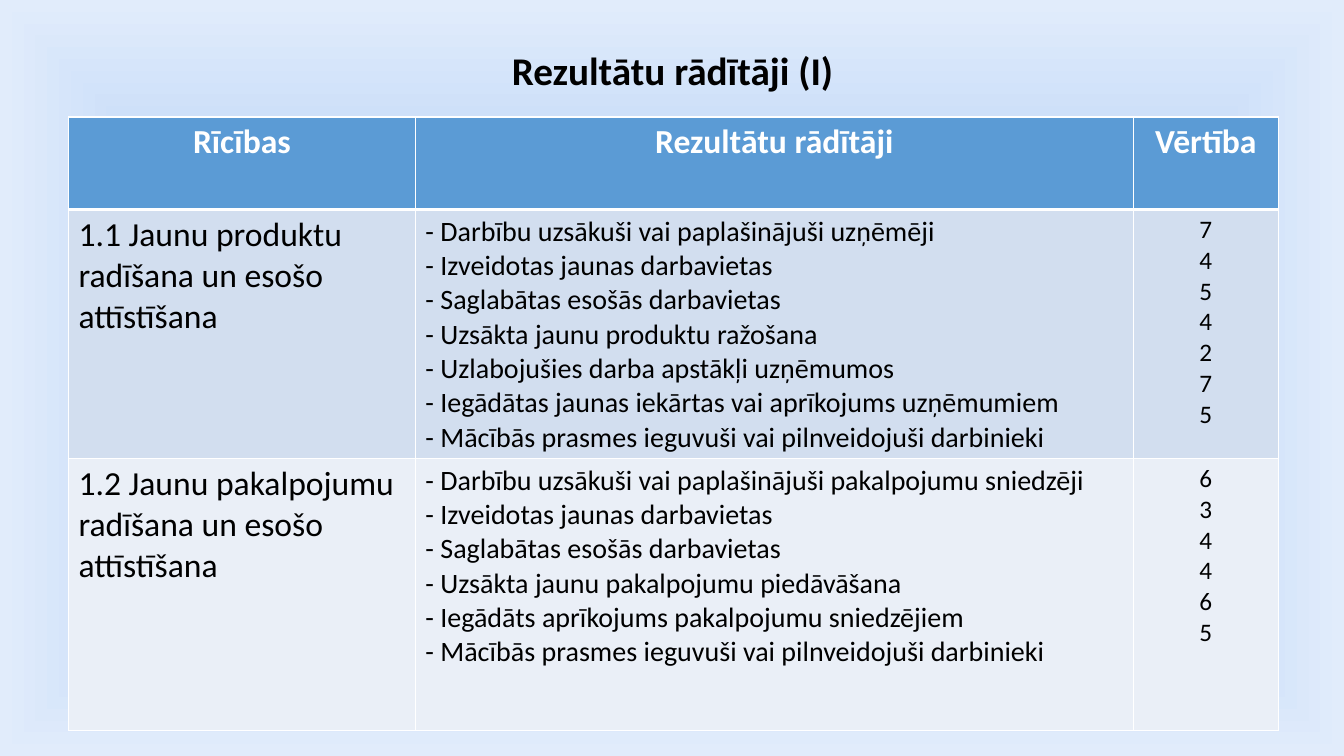
from dataclasses import dataclass

from pptx import Presentation
from pptx.dml.color import RGBColor
from pptx.enum.text import MSO_ANCHOR as Anchor, PP_ALIGN as Align
from pptx.oxml import parse_xml
from pptx.oxml.ns import nsdecls
from pptx.util import Inches, Pt


@dataclass(frozen=True)
class Theme:
    font: str = "Calibri"
    title_size: int = 28
    heading_size: int = 24
    body_size: int = 20
    value_size: int = 18
    ink: str = "000000"
    white: str = "FFFFFF"
    header_fill: str = "5B9BD5"
    band_fills: tuple = ("D2DEEF", "EAEFF7")
    backdrop: tuple = ((0, "FFD966"), (50, "C1D8F8"), (100, "E1ECFB"))


class SlideBuilder:
    def __init__(self, slide, theme):
        self.slide = slide
        self.theme = theme

    def background(self):
        stops = "".join(
            f'<a:gs pos="{place * 1000}"><a:srgbClr val="{color}"/></a:gs>'
            for place, color in self.theme.backdrop
        )
        self.slide.element.cSld.insert(0, parse_xml(
            f'<p:bg {nsdecls("p", "a")}><p:bgPr><a:gradFill rotWithShape="1">'
            f'<a:gsLst>{stops}</a:gsLst><a:path path="shape">'
            '<a:fillToRect l="50000" t="50000" r="50000" b="50000"/></a:path>'
            '</a:gradFill><a:effectLst/></p:bgPr></p:bg>'
        ))

    def add_lines(self, frame, lines, size, color, align=Align.LEFT, bold=False, spacing=None):
        frame.word_wrap = True
        for index, line in enumerate(lines):
            paragraph = frame.add_paragraph() if index else frame.paragraphs[0]
            paragraph.alignment = align
            paragraph.line_spacing = spacing
            run = paragraph.add_run()
            run.text = line
            run.font.name = self.theme.font
            run.font.size = Pt(size)
            run.font.bold = bold
            run.font.color.rgb = RGBColor.from_string(color)

    def title(self, text, left, top, width, height):
        box = self.slide.shapes.add_textbox(
            Inches(left), Inches(top), Inches(width), Inches(height))
        box.text_frame.vertical_anchor = Anchor.MIDDLE
        self.add_lines(box.text_frame, [text], self.theme.title_size, self.theme.ink,
                       Align.CENTER, bold=True, spacing=0.9)

    def cell(self, cell, lines, fill, size, color, align, bold=False, bottom=1):
        properties = cell._tc.get_or_add_tcPr()
        for side, width in (("L", 1), ("R", 1), ("T", 1), ("B", bottom)):
            properties.append(parse_xml(
                f'<a:ln{side} {nsdecls("a")} w="{Pt(width)}"><a:solidFill>'
                f'<a:srgbClr val="{self.theme.white}"/></a:solidFill></a:ln{side}>'
            ))
        cell.fill.solid()
        cell.fill.fore_color.rgb = RGBColor.from_string(fill)
        self.add_lines(cell.text_frame, lines, size, color, align, bold)

    def table(self, headings, actions, left, top, widths, heights):
        theme = self.theme
        table = self.slide.shapes.add_table(
            len(heights), len(widths), Inches(left), Inches(top),
            Inches(sum(widths)), Inches(sum(heights))).table
        table.horz_banding = False
        for column, width in zip(table.columns, widths):
            column.width = Inches(width)
        for row, height in zip(table.rows, heights):
            row.height = Inches(height)

        # Header row
        for column, heading in enumerate(headings):
            self.cell(table.cell(0, column), [heading], theme.header_fill,
                      theme.heading_size, theme.white, Align.CENTER, True, bottom=3)

        # One row per action: name, indicators, values
        columns = ((theme.heading_size, Align.LEFT), (theme.body_size, Align.LEFT),
                   (theme.value_size, Align.CENTER))
        for row, (action, indicators) in enumerate(actions.items(), start=1):
            names = [f"- {name}" for name, _ in indicators]
            values = [str(value) for _, value in indicators]
            for column, lines in enumerate(([action], names, values)):
                size, align = columns[column]
                self.cell(table.cell(row, column), lines, theme.band_fills[row - 1],
                          size, theme.ink, align)


HEADINGS = ("Rīcības", "Rezultātu rādītāji", "Vērtība")
NEW_JOBS = "Izveidotas jaunas darbavietas"
KEPT_JOBS = "Saglabātas esošās darbavietas"
SKILLS = "Mācībās prasmes ieguvuši vai pilnveidojuši darbinieki"
ACTIONS = {
    "1.1 Jaunu produktu radīšana un esošo attīstīšana": (
        ("Darbību uzsākuši vai paplašinājuši uzņēmēji", 7),
        (NEW_JOBS, 4),
        (KEPT_JOBS, 5),
        ("Uzsākta jaunu produktu ražošana", 4),
        ("Uzlabojušies darba apstākļi uzņēmumos", 2),
        ("Iegādātas jaunas iekārtas vai aprīkojums uzņēmumiem", 7),
        (SKILLS, 5),
    ),
    "1.2 Jaunu pakalpojumu radīšana un esošo attīstīšana": (
        ("Darbību uzsākuši vai paplašinājuši pakalpojumu sniedzēji", 6),
        (NEW_JOBS, 3),
        (KEPT_JOBS, 4),
        ("Uzsākta jaunu pakalpojumu piedāvāšana", 4),
        ("Iegādāts aprīkojums pakalpojumu sniedzējiem", 6),
        (SKILLS, 5),
    ),
}


def main():
    deck = Presentation()
    deck.slide_width, deck.slide_height = Inches(13.33), Inches(7.5)
    builder = SlideBuilder(deck.slides.add_slide(deck.slide_layouts[6]), Theme())
    builder.background()
    builder.title("Rezultātu rādītāji (I)", 0.92, 0.32, 11.5, 0.81)
    builder.table(HEADINGS, ACTIONS, 0.68, 1.16,
                  widths=(3.44, 7.12, 1.44), heights=(0.92, 2.47, 2.7))
    deck.save("out.pptx")


if __name__ == "__main__":
    main()
